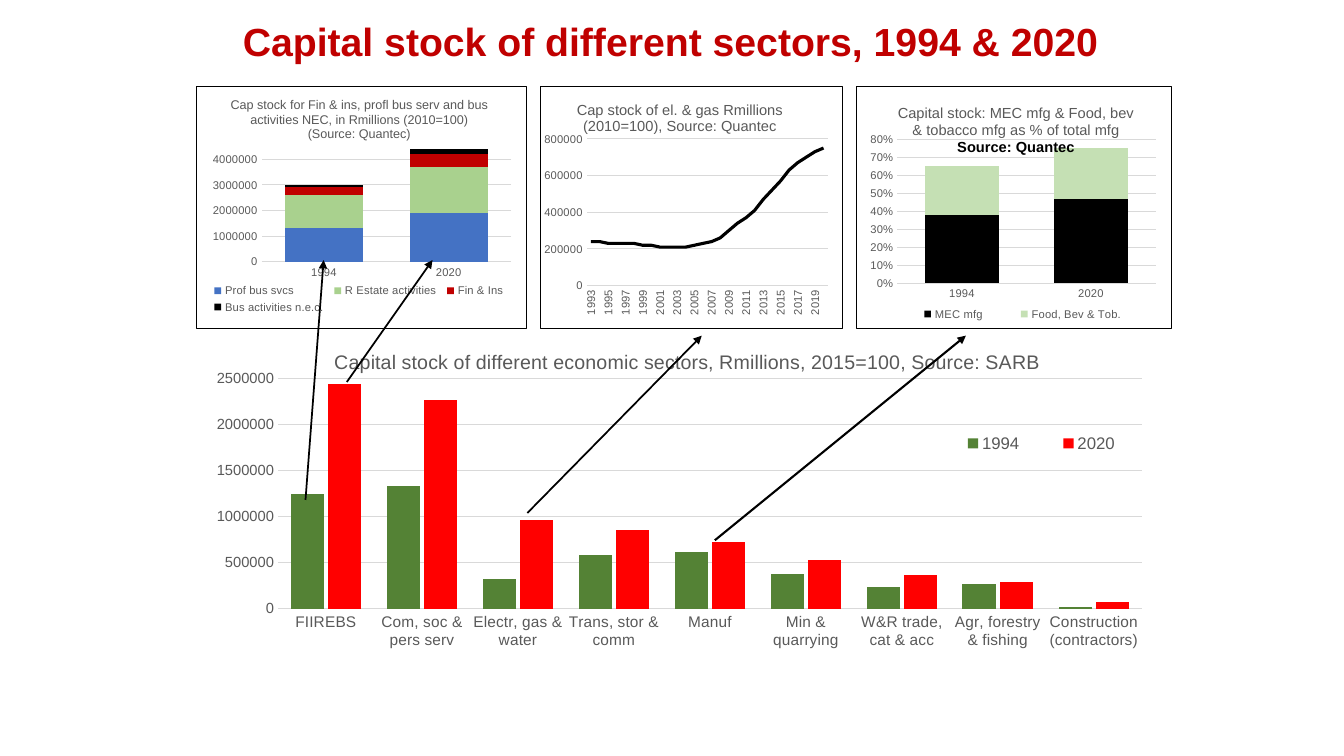
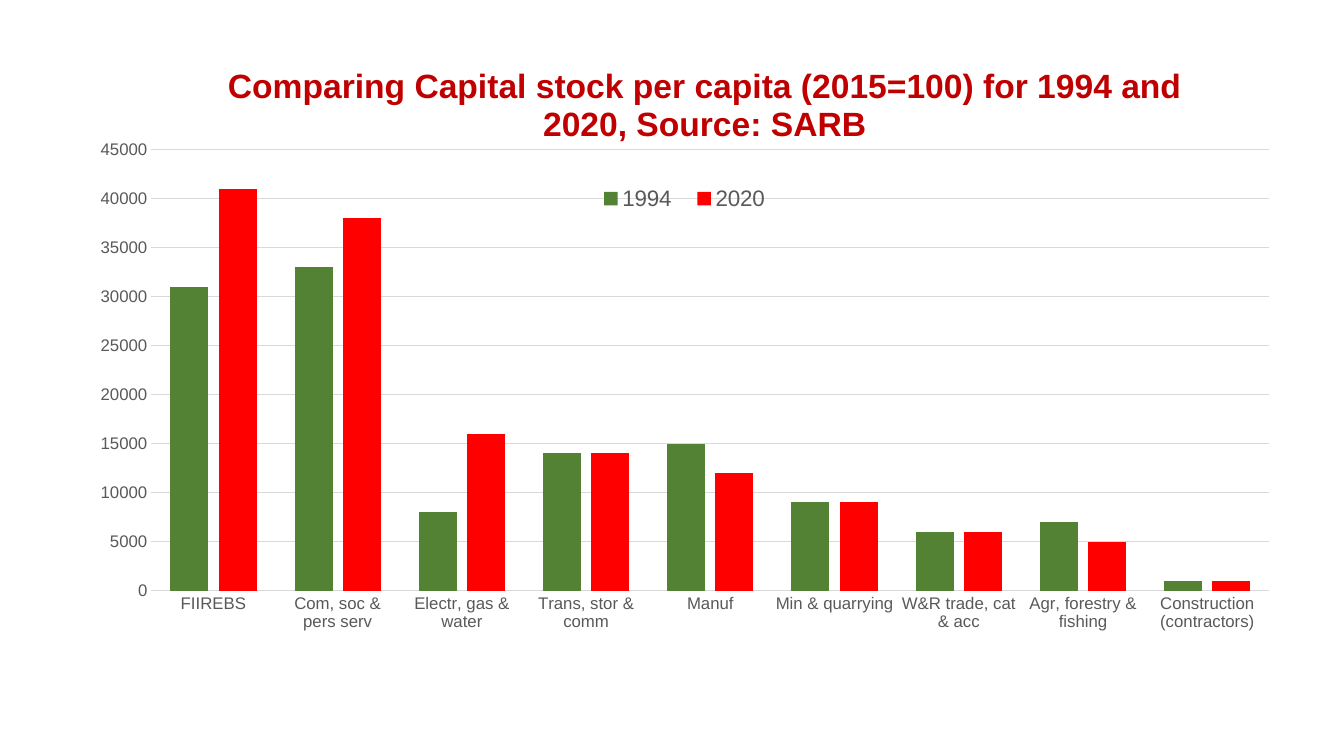
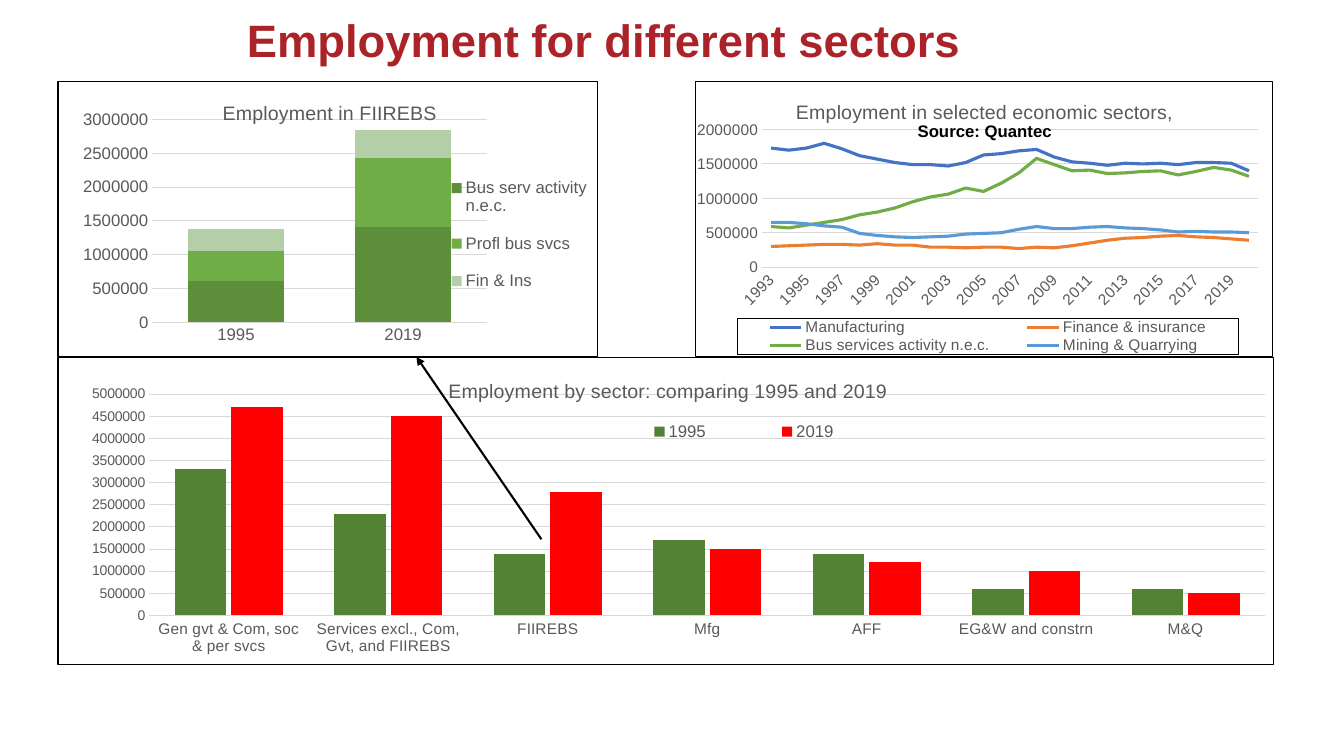
from lxml import etree
from pptx import Presentation
from pptx import util as u
from pptx.chart.data import CategoryChartData
from pptx.dml.color import RGBColor
from pptx.enum import chart as ch
from pptx.enum import shapes, text
from pptx.oxml import ns

THEME = {
    "font": "Arial", "black": "000000", "grey": "595959", "rule": "D9D9D9",
    "green": "548235", "red": "FF0000", "crimson": "C00000", "maroon": "AB2328",
    "blue": "4472C4", "lime": "A9D18E", "mint": "C5E0B4", "orange": "ED7D31",
    "leaf": "70AD47", "moss": "5D8F3B", "sage": "B4CFA8", "sky": "5B9BD5",
    "heading": 28, "heading_large": 32.4, "hairline": 0.75, "curve": 2.25,
}
CLUSTERED = ch.XL_CHART_TYPE.COLUMN_CLUSTERED
STACKED = ch.XL_CHART_TYPE.COLUMN_STACKED
LINE = ch.XL_CHART_TYPE.LINE
YEARS = [str(year) for year in range(1993, 2021)]
SECTORS = ["FIIREBS", "Com, soc & pers serv", "Electr, gas & water", "Trans, stor & comm",
           "Manuf", "Min & quarrying", "W&R trade, cat & acc", "Agr, forestry & fishing",
           "Construction (contractors)"]


def thousands(*values):
    return [value * 1000 for value in values]


CAPITAL_BY_SECTOR = {
    "type": CLUSTERED, "at": (1.79, 3.33, 9.77, 3.26), "plot": (0.099, 0.13, 0.877, 0.701),
    "title": "Capital stock of different economic sectors, Rmillions, 2015=100, Source: SARB",
    "title_at": (3.28, 3.43), "title_size": 14, "axis_sizes": (11, 10.5),
    "scale": (2500000, 500000), "format": "General", "gap": 75, "overlap": -10,
    "legend_at": (9.22, 4.25, 2.22, 0.3), "legend_size": 12, "categories": SECTORS,
    "series": [
        ("1994", "green", thousands(1240, 1330, 320, 580, 610, 380, 230, 270, 20)),
        ("2020", "red", thousands(2440, 2260, 960, 850, 720, 530, 360, 290, 70)),
    ],
}
ELECTRICITY = {
    "type": LINE, "at": (5.36, 0.85, 3, 2.41), "plot": (0.152, 0.218, 0.8, 0.607),
    "title": "Cap stock of el. & gas Rmillions (2010=100), Source: Quantec",
    "title_at": (5.69, 0.96), "title_size": 10.5, "axis_sizes": (8, 8),
    "scale": (800000, 200000), "label_turn": -90, "border": True, "categories": YEARS,
    "series": [
        ("Series 1", "black", thousands(
            240, 240, 230, 230, 230, 230, 220, 220, 210, 210, 210, 210, 220, 230,
            240, 260, 300, 340, 370, 410, 470, 520, 570, 630, 670, 700, 730, 750)),
    ],
}
FINANCE = {
    "type": STACKED, "at": (1.94, 0.85, 3.29, 2.41), "plot": (0.198, 0.249, 0.755, 0.477),
    "title": "Cap stock for Fin & ins, profl bus serv and bus activities NEC, "
             "in Rmillions (2010=100) (Source: Quantec)",
    "title_at": (2.26, 0.93), "title_size": 9, "axis_sizes": (8, 8),
    "scale": (4500000, 1000000), "gap": 59, "overlap": 100, "border": True,
    "legend_at": (2.05, 2.79, 3.02, 0.36), "legend_size": 8, "categories": ["1994", "2020"],
    "series": [
        ("Prof bus svcs", "blue", thousands(1300, 1900)),
        ("R Estate activities", "lime", thousands(1300, 1800)),
        ("Fin & Ins", "crimson", thousands(300, 500)),
        ("Bus activities n.e.c.", "black", thousands(100, 200)),
    ],
}
MANUFACTURING = {
    "type": STACKED, "at": (8.49, 0.85, 3.13, 2.41), "plot": (0.13, 0.22, 0.821, 0.595),
    "title": "Capital stock: MEC mfg & Food, bev & tobacco mfg as % of total mfg",
    "source": "Source: Quantec", "source_size": 10.5,
    "title_at": (8.87, 0.99), "title_size": 10.5, "axis_sizes": (8, 8),
    "scale": (0.8, 0.1), "format": "0%", "gap": 75, "overlap": 100, "border": True,
    "legend_at": (8.82, 3, 2.65, 0.24), "legend_size": 8, "categories": ["1994", "2020"],
    "series": [
        ("MEC mfg", "black", [0.38, 0.47]),
        ("Food, Bev & Tob.", "mint", [0.27, 0.28]),
    ],
}
CAPITAL_PER_CAPITA = {
    "type": CLUSTERED, "at": (0.58, 0.43, 12.12, 6.04), "plot": (0.076, 0.175, 0.915, 0.724),
    "title": "Comparing Capital stock per capita (2015=100) for 1994 and 2020, Source: SARB",
    "title_at": (2.2, 0.58), "title_size": 24, "title_color": "crimson", "title_bold": True,
    "axis_sizes": (12, 12), "scale": (45000, 5000), "gap": 100, "overlap": -27,
    "legend_at": (5.81, 1.77, 1.96, 0.4), "legend_size": 16, "categories": SECTORS,
    "series": [
        ("1994", "green", thousands(31, 33, 8, 14, 15, 9, 6, 7, 1)),
        ("2020", "red", thousands(41, 38, 16, 14, 12, 9, 6, 5, 1)),
    ],
}
JOBS_BY_SECTOR = {
    "type": CLUSTERED, "at": (0.57, 3.54, 12.07, 3.06), "plot": (0.075, 0.12, 0.918, 0.72),
    "title": "Employment by sector: comparing 1995 and 2019",
    "title_at": (4.41, 3.71), "title_size": 14, "axis_sizes": (11, 10),
    "scale": (5000000, 500000), "gap": 100, "overlap": -10, "border": True,
    "legend_at": (5.79, 4.13, 3.18, 0.3), "legend_size": 12,
    "categories": ["Gen gvt & Com, soc & per svcs", "Services excl., Com, Gvt, and FIIREBS",
                   "FIIREBS", "Mfg", "AFF", "EG&W and constrn", "M&Q"],
    "series": [
        ("1995", "green", thousands(3300, 2300, 1400, 1700, 1400, 600, 600)),
        ("2019", "red", thousands(4700, 4500, 2800, 1500, 1200, 1000, 500)),
    ],
}
JOBS_IN_FIIREBS = {
    "type": STACKED, "at": (0.57, 0.8, 5.36, 2.74), "plot": (0.175, 0.14, 0.62, 0.737),
    "title": "Employment in FIIREBS",
    "title_at": (2.17, 0.96), "title_size": 14, "axis_sizes": (12, 12),
    "scale": (3000000, 500000), "gap": 75, "overlap": 100, "border": True,
    "legend_at": (4.55, 1.58, 1.38, 1.5), "legend_size": 12, "categories": ["1995", "2019"],
    "series": [
        ("Bus serv activity n.e.c.", "moss", thousands(610, 1410)),
        ("Profl bus svcs", "leaf", thousands(450, 1020)),
        ("Fin & Ins", "sage", thousands(320, 410)),
    ],
}
JOBS_OVER_TIME = {
    "type": LINE, "at": (6.89, 0.8, 5.74, 2.74), "plot": (0.116, 0.176, 0.858, 0.5),
    "title": "Employment in selected economic sectors,",
    "source": "Source: Quantec", "source_size": 12,
    "title_at": (7.86, 0.95), "title_size": 14, "axis_sizes": (11, 11),
    "scale": (2000000, 500000), "format": "General", "label_turn": -45, "border": True,
    "legend_at": (7.31, 3.16, 4.98, 0.36), "legend_size": 11, "legend_border": True,
    "categories": YEARS,
    "series": [
        ("Manufacturing", "blue", thousands(
            1730, 1700, 1730, 1800, 1720, 1620, 1570, 1520, 1490, 1490, 1470, 1520, 1630, 1650,
            1690, 1710, 1600, 1530, 1510, 1480, 1510, 1500, 1510, 1490, 1520, 1520, 1510, 1400)),
        ("Finance & insurance", "orange", thousands(
            300, 310, 320, 330, 330, 320, 340, 320, 320, 290, 290, 280, 290, 290,
            270, 290, 280, 310, 350, 390, 420, 430, 450, 460, 440, 430, 410, 390)),
        ("Bus services activity n.e.c.", "leaf", thousands(
            590, 570, 610, 650, 690, 760, 800, 860, 950, 1020, 1060, 1150, 1100, 1220,
            1370, 1580, 1490, 1400, 1410, 1360, 1370, 1390, 1400, 1340, 1390, 1450, 1410, 1320)),
        ("Mining & Quarrying", "sky", thousands(
            650, 650, 630, 600, 580, 490, 460, 440, 430, 440, 450, 480, 490, 500,
            550, 590, 560, 560, 580, 590, 570, 560, 540, 510, 520, 510, 510, 500)),
    ],
}
SLIDES = [
    {"heading": ("Capital stock of different sectors, 1994 & 2020",
                 (2.31, 0.13, 8.89, 0.6), "heading", "crimson"),
     "charts": [CAPITAL_BY_SECTOR, ELECTRICITY, FINANCE, MANUFACTURING],
     "arrows": [((3.03, 4.96), (3.21, 2.58), 1.25), ((3.44, 3.79), (4.29, 2.58), 1.25),
                ((5.23, 5.09), (6.96, 3.33), 1.25), ((7.09, 5.36), (9.58, 3.33), 1.5)]},
    {"charts": [CAPITAL_PER_CAPITA]},
    {"heading": ("Employment for different sectors",
                 (2.35, 0.22, 8.62, 0.41), "heading_large", "maroon"),
     "charts": [JOBS_BY_SECTOR, JOBS_IN_FIIREBS, JOBS_OVER_TIME],
     "arrows": [((5.37, 5.35), (4.13, 3.54), 1.5)]},
]


def color(name):
    return RGBColor.from_string(THEME[name])


def inches(values):
    return [u.Inches(value) for value in values]


def style_font(font, size, color_name="grey", bold=False):
    font.name = THEME["font"]
    font.size = u.Pt(size)
    font.bold = bold
    font.color.rgb = color(color_name)


def add_child(parent, tag, **attributes):
    return etree.SubElement(parent, ns.qn(tag), attributes)


def frame_properties(bordered):
    properties = etree.Element(ns.qn("c:spPr"))
    add_child(properties, "a:noFill")
    line = add_child(properties, "a:ln", w=str(u.Pt(THEME["hairline"])))
    if bordered:
        add_child(add_child(line, "a:solidFill"), "a:srgbClr", val=THEME["black"])
    else:
        add_child(line, "a:noFill")
    return properties


def set_layout(element, fractions, index, inner=False):
    for old in element.findall(ns.qn("c:layout")):
        element.remove(old)
    layout = etree.Element(ns.qn("c:layout"))
    manual = add_child(layout, "c:manualLayout")
    if inner:
        add_child(manual, "c:layoutTarget", val="inner")
    for mode in ("c:xMode", "c:yMode"):
        add_child(manual, mode, val="edge")
    for name, value in zip(("x", "y", "w", "h"), fractions):
        add_child(manual, f"c:{name}", val=f"{value:.4f}")
    element.insert(index, layout)


def chart_fractions(area, chart_at):
    left, top, width, height = chart_at
    x, y, *size = area
    return [(x - left) / width, (y - top) / height,
            *(part / whole for part, whole in zip(size, (width, height)))]


def style_title(chart, item):
    frame = chart.chart_title.text_frame
    frame.text = item["title"]
    style_font(frame.paragraphs[0].runs[0].font, item["title_size"],
               item.get("title_color", "grey"), item.get("title_bold", False))
    if "source" in item:
        para = frame.add_paragraph()
        para.text = item["source"]
        style_font(para.runs[0].font, item["source_size"], "black", True)
    chart.chart_title.include_in_layout = False
    set_layout(chart.chart_title._element, chart_fractions(item["title_at"], item["at"]), 1)


def style_axes(chart, item):
    categories, values = chart.category_axis, chart.value_axis
    for axis, size in zip((categories, values), item["axis_sizes"]):
        axis.major_tick_mark = axis.minor_tick_mark = ch.XL_TICK_MARK.NONE
        style_font(axis.tick_labels.font, size)
    categories.format.line.color.rgb = color("rule")
    categories.format.line.width = u.Pt(THEME["hairline"])
    values.format.line.fill.background()
    values.has_major_gridlines = True
    values.major_gridlines.format.line.color.rgb = color("rule")
    values.major_gridlines.format.line.width = u.Pt(THEME["hairline"])
    values.minimum_scale = 0
    values.maximum_scale, values.major_unit = item["scale"]
    values.tick_labels.number_format = item.get("format", "0")
    values.tick_labels.number_format_is_linked = False
    if "label_turn" in item:
        element = categories._element
        body = element.find(ns.qn("c:txPr")).find(ns.qn("a:bodyPr"))
        body.set("rot", str(item["label_turn"] * 60000))
        body.set("vert", "horz")
        skip = etree.Element(ns.qn("c:tickLblSkip"), val="2")
        element.find(ns.qn("c:noMultiLvlLbl")).addprevious(skip)


def style_series(chart, item):
    plot = chart.plots[0]
    plot.vary_by_categories = False
    if item["type"] != LINE:
        plot.gap_width, plot.overlap = item["gap"], item["overlap"]
    for series, (_, color_name, _) in zip(plot.series, item["series"]):
        if item["type"] == LINE:
            series.smooth = False
            series.marker.style = ch.XL_MARKER_STYLE.NONE
            series.format.line.color.rgb = color(color_name)
            series.format.line.width = u.Pt(THEME["curve"])
        else:
            series.format.fill.solid()
            series.format.fill.fore_color.rgb = color(color_name)


def style_legend(chart, item):
    chart.has_legend = "legend_at" in item
    if not chart.has_legend:
        return
    legend = chart.legend
    legend.position = ch.XL_LEGEND_POSITION.BOTTOM
    legend.include_in_layout = False
    style_font(legend.font, item["legend_size"])
    set_layout(legend._element, chart_fractions(item["legend_at"], item["at"]), 1)
    if item.get("legend_border"):
        legend._element.find(ns.qn("c:overlay")).addnext(frame_properties(True))


def add_chart(page, item):
    data = CategoryChartData()
    data.categories = item["categories"]
    for name, _, values in item["series"]:
        data.add_series(name, values)
    chart = page.shapes.add_chart(item["type"], *inches(item["at"]), data).chart
    style_font(chart.font, 10, "black")
    style_title(chart, item)
    style_axes(chart, item)
    style_series(chart, item)
    style_legend(chart, item)
    body = chart._chartSpace.find(ns.qn("c:chart"))
    set_layout(body.find(ns.qn("c:plotArea")), item["plot"], 0, inner=True)
    body.addnext(frame_properties(item.get("border", False)))


def add_heading(page, wording, area, size_name, color_name):
    box = page.shapes.add_textbox(*inches(area))
    frame = box.text_frame
    frame.word_wrap = True
    frame.vertical_anchor = text.MSO_ANCHOR.MIDDLE
    frame.text = wording
    para = frame.paragraphs[0]
    para.line_spacing = 0.9
    style_font(para.runs[0].font, THEME[size_name], color_name, True)


def add_arrow(page, start, end, width):
    arrow = page.shapes.add_connector(shapes.MSO_CONNECTOR.STRAIGHT, *inches(start + end))
    arrow.line.color.rgb = color("black")
    arrow.line.width = u.Pt(width)
    properties = arrow._element.spPr
    add_child(properties.find(ns.qn("a:ln")), "a:tailEnd", type="triangle")
    add_child(properties, "a:effectLst")


def main():
    deck = Presentation()
    deck.slide_width, deck.slide_height = inches((13.33, 7.5))
    for content in SLIDES:
        page = deck.slides.add_slide(deck.slide_layouts[6])
        if "heading" in content:
            add_heading(page, *content["heading"])
        for item in content["charts"]:
            add_chart(page, item)
        for arrow in content.get("arrows", []):
            add_arrow(page, *arrow)
    deck.save("out.pptx")


if __name__ == "__main__":
    main()
